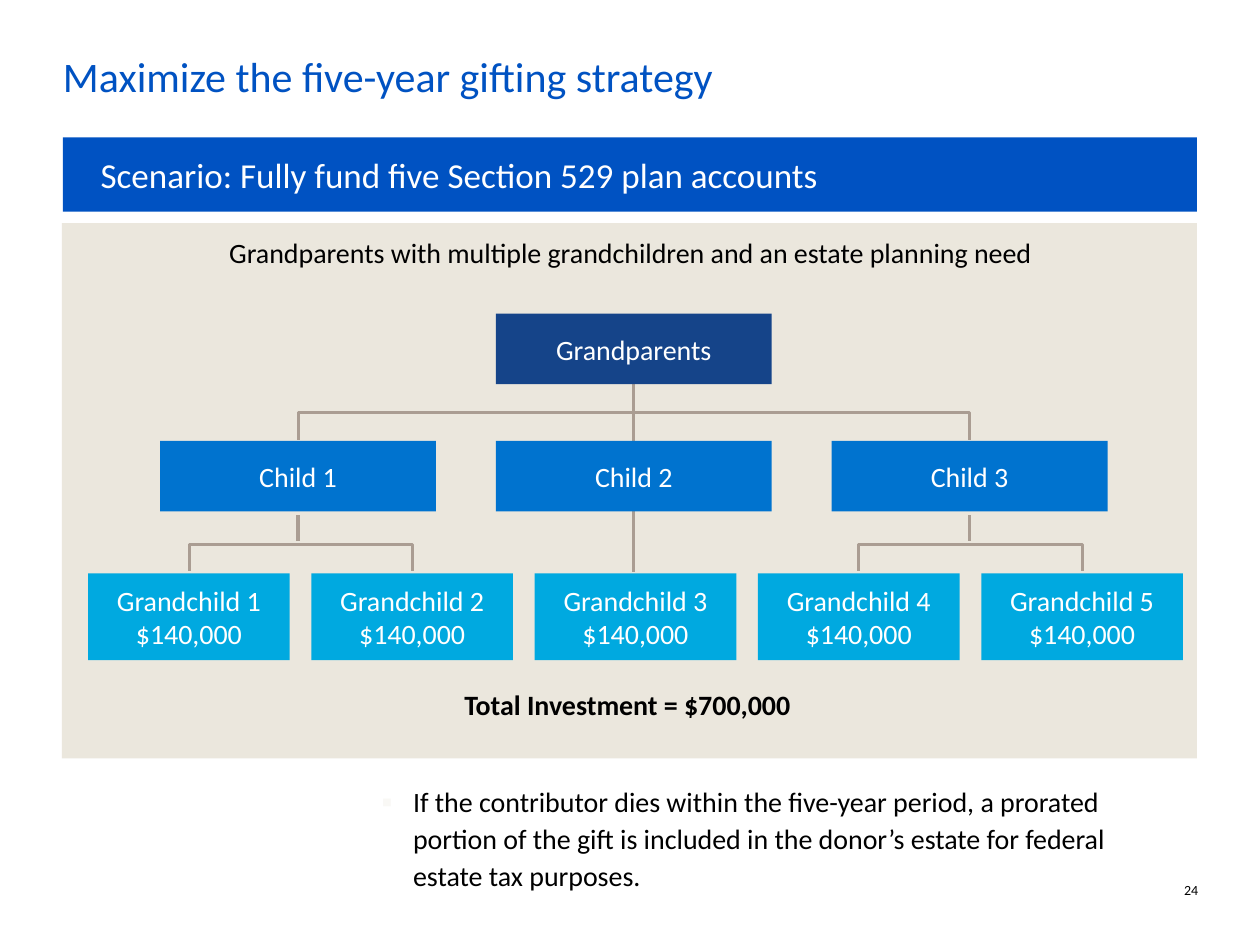
import pptx
import pptx.util
import pptx.dml.color
import pptx.enum.shapes
import pptx.enum.text
import pptx.oxml.ns
import lxml.etree

COLORS = {
    "blue": "0052C2", "navy": "154489", "mid": "0073CF", "sky": "00A9E0",
    "sand": "EBE7DD", "line": "AA9D92", "pale": "F9F8F5",
    "white": "FFFFFF", "black": "000000",
}
COLS, ROWS = 100, 75
SHAPE = pptx.enum.shapes.MSO_SHAPE.RECTANGLE
LINK = pptx.enum.shapes.MSO_CONNECTOR
ALIGN = pptx.enum.text.PP_ALIGN
ANCHOR = pptx.enum.text.MSO_ANCHOR


def tint(name):
    return pptx.dml.color.RGBColor.from_string(COLORS[name])


def add(parent, tag, **attrs):
    return lxml.etree.SubElement(parent, pptx.oxml.ns.qn(tag), attrs)


class Page:
    """Places elements on a grid of 100 columns by 75 rows."""
    face = "Calibri"
    size = 16

    def __init__(self, deck):
        self.slide = deck.slides.add_slide(deck.slide_layouts[6])
        self.shapes = self.slide.shapes
        self.col = deck.slide_width / COLS
        self.row = deck.slide_height / ROWS

    def scale(self, x, y, w, h):
        return (round(x * self.col), round(y * self.row),
                round(w * self.col), round(h * self.row))

    def fill(self, frame, lines, color, size=None, align=ALIGN.LEFT, bold=False):
        """Sets lines of text in a frame, one paragraph each."""
        frame.word_wrap = True
        for i, line in enumerate(lines):
            par = frame.paragraphs[0] if i == 0 else frame.add_paragraph()
            par.text = line
            par.alignment = align
            par.font.name = self.face
            par.font.size = pptx.util.Pt(size or self.size)
            par.font.bold = bold
            par.font.color.rgb = tint(color)

    def text(self, box, line, color="black", inset=(0.1, 0.05), **style):
        frame = self.shapes.add_textbox(*self.scale(*box)).text_frame
        side, edge = (pptx.util.Inches(n) for n in inset)
        frame.margin_left = frame.margin_right = side
        frame.margin_top = frame.margin_bottom = edge
        self.fill(frame, [line], color, **style)
        return frame

    def note(self, box, line):
        """Bulleted text that sits at the bottom of its box."""
        frame = self.shapes.add_textbox(*self.scale(*box)).text_frame
        frame.vertical_anchor = ANCHOR.BOTTOM
        par = frame.paragraphs[0]
        par.line_spacing = 1.1
        props = par._p.get_or_add_pPr()
        step = pptx.util.Inches(0.25)
        props.set("marL", str(step))
        props.set("indent", str(-step))
        add(add(props, "a:buClr"), "a:srgbClr", val=COLORS["pale"])
        add(props, "a:buSzPct", val="110000")
        add(props, "a:buFont", typeface="Arial")
        add(props, "a:buChar", char="▪")
        self.fill(frame, [line], "black")

    def block(self, box, color, *lines):
        shape = self.shapes.add_shape(SHAPE, *self.scale(*box))
        shape.shadow.inherit = False
        shape.fill.solid()
        shape.fill.fore_color.rgb = tint(color)
        shape.line.fill.background()
        if lines:
            shape.text_frame.vertical_anchor = ANCHOR.MIDDLE
            self.fill(shape.text_frame, lines, "white", align=ALIGN.CENTER)

    def link(self, kind, x1, y1, x2, y2):
        line = self.shapes.add_connector(kind, *self.scale(x1, y1, x2, y2))
        line.line.color.rgb = tint("line")
        line.line.width = pptx.util.Pt(1.75)
        add(line._element.spPr, "a:effectLst")
        return line

    def stem(self, x, top, base):
        self.link(LINK.STRAIGHT, x, top, x, base)

    def fork(self, left, right, top, base):
        """Bracket open downwards: a thin elbow, turned a quarter."""
        mid, half, thin = (left + right) / 2, (right - left) / 2, 0.02
        elbow = self.link(LINK.ELBOW, mid, base + half, mid + thin, base - half)
        props = elbow._element.spPr
        props.find(pptx.oxml.ns.qn("a:xfrm")).set("rot", "5400000")
        geom = props.find(pptx.oxml.ns.qn("a:prstGeom"))
        for old in list(geom):
            geom.remove(old)
        bend = round((top - base) / thin * 100000)
        add(add(geom, "a:avLst"), "a:gd", name="adj1", fmla=f"val {bend}")


def tree(page):
    wide, tall = 21.9, 5.6
    kids = [12.7 + 26.65 * i for i in range(3)]
    mids = [x + wide / 2 for x in kids]
    small, pitch, low = 16, 17.72, 45.5
    grands = [7 + pitch * i for i in range(5)]
    tips = [x + small / 2 for x in grands]

    page.stem(mids[1], 30.5, 35)
    page.fork(mids[0], mids[2], 32.7, 34.9)
    page.stem(mids[1], 40.5, 45.4)
    for mid, first in ((mids[0], 0), (mids[2], 3)):
        page.stem(mid, 40.9, 42.9)
        page.fork(tips[first], tips[first + 1], 43.2, 45.3)

    page.block((kids[1], 24.9, wide, tall), "navy", "Grandparents")
    for i, x in enumerate(kids, 1):
        page.block((x, 35, wide, tall), "mid", f"Child {i}")
    for i, x in enumerate(grands, 1):
        page.block((x, low, small, 6.9), "sky", f"Grandchild {i}", "$140,000")


def main():
    deck = pptx.Presentation()
    deck.slide_width = pptx.util.Inches(10)
    deck.slide_height = pptx.util.Inches(7.5)
    page = Page(deck)
    page.block((4.9, 17.7, 90.1, 42.5), "sand")
    page.text((5, 3.5, 90, 6.3), "Maximize the five-year gifting strategy",
              "blue", inset=(0, 0.05), size=24)
    page.block((5, 10.9, 90, 5.9), "blue")
    page.text((7, 11.7, 91, 4.4),
              "Scenario: Fully fund five Section 529 plan accounts",
              "white", size=20)
    intro = page.text((5, 18.2, 90.1, 4.4),
                      "Grandparents with multiple grandchildren and an estate planning need",
                      inset=(0, 0), align=ALIGN.CENTER)
    intro.paragraphs[0].line_spacing = 1.2
    tree(page)
    page.text((4.7, 54.1, 90.2, 3.7), "Total Investment = $700,000",
              align=ALIGN.CENTER, bold=True)
    page.note((29.3, 61.4, 65.1, 9.9),
              "If the contributor dies within the five-year period, a prorated "
              "portion of the gift is included in the donor’s estate for federal "
              "estate tax purposes.")
    page.text((90.7, 70, 4.4, 1.4), "24", inset=(0, 0), size=8, align=ALIGN.RIGHT)
    deck.save("out.pptx")


if __name__ == "__main__":
    main()
